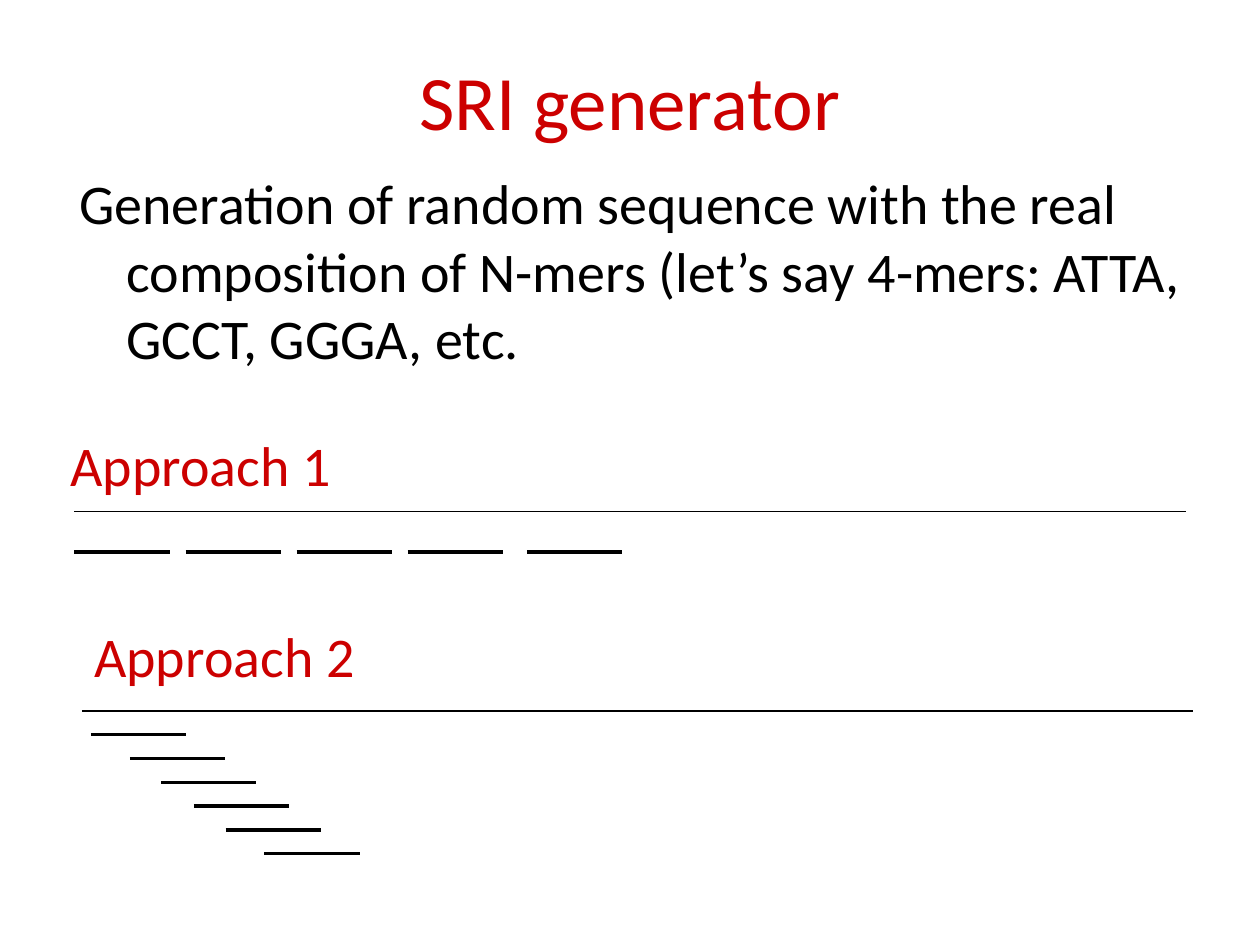
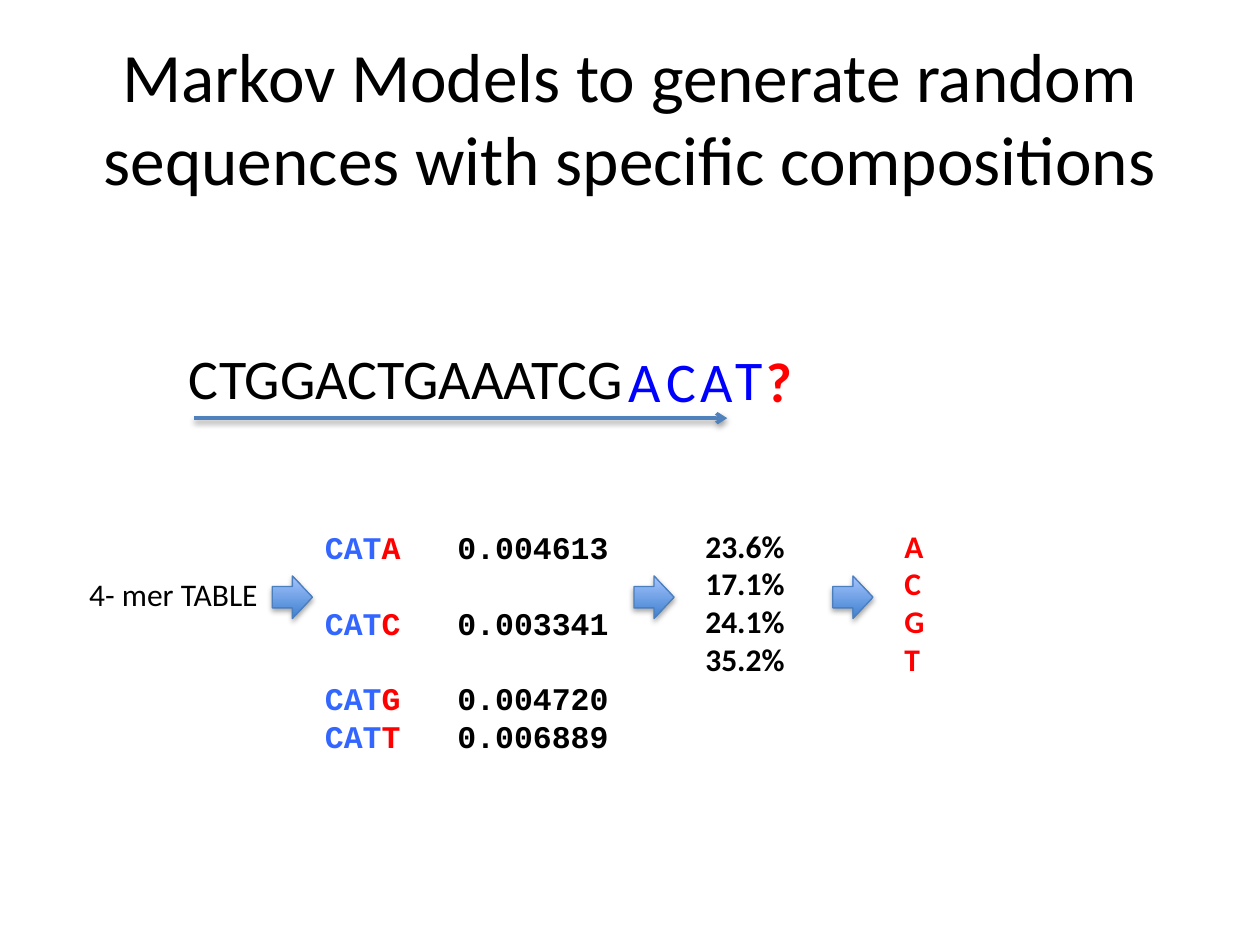
from lxml import etree
from pptx import Presentation
from pptx import util as u
from pptx.dml.color import RGBColor
from pptx.enum import shapes, text
from pptx.oxml.ns import qn

FONT, MONO = "Calibri", "Courier New"
BLACK, CRIMSON, RED = "000000", "CC0000", "FF0000"
BLUE, KMER_BLUE = "0000FF", "3366FF"
ARROW_BLUE, BLOCK_EDGE = "4F81BD", "4B7EBC"
GRADIENT = ("3F80CE", "A4C4FF")


def rgb(value):
    return RGBColor.from_string(value)


def set_effects(sp, alpha=None, dist=0):
    """Give the shape a soft drop shadow, or none without alpha."""
    effects = etree.SubElement(sp._element.spPr, qn("a:effectLst"))
    if alpha:
        shadow = etree.SubElement(
            effects, qn("a:outerShdw"), blurRad=str(u.Pt(3.1)),
            dist=str(u.Pt(dist)), dir="5400000", rotWithShape="0")
        color = etree.SubElement(shadow, qn("a:srgbClr"), val=BLACK)
        etree.SubElement(color, qn("a:alpha"), val=str(alpha * 1000))


def add_text(s, box, paras, size=32, color=BLACK, font=FONT, bold=False,
             wrap=False, align=text.PP_ALIGN.LEFT,
             anchor=text.MSO_ANCHOR.TOP):
    """Add a text box; a paragraph is a string or a list of (text, colour)."""
    sp = s.shapes.add_textbox(*(u.Cm(v) for v in box))
    tf = sp.text_frame
    tf.word_wrap = wrap
    tf.vertical_anchor = anchor
    for i, runs in enumerate(paras):
        p = tf.paragraphs[0] if i == 0 else tf.add_paragraph()
        p.alignment = align
        for words, run_color in [(runs, color)] if isinstance(runs, str) else runs:
            r = p.add_run()
            r.text = words
            r.font.size, r.font.name, r.font.bold = u.Pt(size), font, bold
            r.font.color.rgb = rgb(run_color)
    return tf


def add_title(s, words, height, **style):
    add_text(s, (1.27, 0.76, 22.86, height), [words], wrap=True,
             align=text.PP_ALIGN.CENTER, anchor=text.MSO_ANCHOR.MIDDLE, **style)


def add_line(s, x, y, length, width, color=BLACK):
    """Add a horizontal line."""
    line = s.shapes.add_connector(
        shapes.MSO_CONNECTOR.STRAIGHT,
        u.Cm(x), u.Cm(y), u.Cm(x + length), u.Cm(y))
    line.line.color.rgb = rgb(color)
    line.line.width = u.Pt(width)
    return line


def add_block_arrow(s, x, y):
    sp = s.shapes.add_shape(shapes.MSO_SHAPE.RIGHT_ARROW, u.Cm(x), u.Cm(y),
                            u.Cm(0.81), u.Cm(0.86))
    sp.fill.gradient()
    sp.fill.gradient_angle = 90
    for i, (stop, color) in enumerate(zip(sp.fill.gradient_stops, GRADIENT)):
        stop.position = i
        stop.color.rgb = rgb(color)
    sp.line.color.rgb = rgb(BLOCK_EDGE)
    sp.line.width = u.Pt(0.75)
    set_effects(sp, alpha=35, dist=1.8)


def add_approach(s, x, y, label, label_offset, mers):
    """Draw a sequence line at x, y with its label above and N-mers below."""
    dx, dy = label_offset
    add_text(s, (x + dx, y + dy, 6.27, 1.6), [label], color=CRIMSON)
    set_effects(add_line(s, x, y, 22.4, 0.75))
    for dx, dy in mers:
        set_effects(add_line(s, x + dx, y + dy, 1.92, 2))


def add_sequence(s, x, y):
    """Draw the growing sequence with the next letter unknown."""
    arrow = add_line(s, x + 0.35, y + 1.62, 10.75, 2, ARROW_BLUE)
    etree.SubElement(arrow._element.spPr.find(qn("a:ln")), qn("a:tailEnd"),
                     type="arrow")
    set_effects(arrow, alpha=38, dist=1.6)
    add_text(s, (x, y, 9.32, 1.63), ["CTGGACTGAAATCG"])
    for letter, dx, dy, w in (("A", 8.86, 0.05, 1.17), ("C", 9.62, 0.05, 1.12),
                              ("A", 10.31, 0.05, 1.17), ("T", 11.02, 0.02, 1.07)):
        add_text(s, (x + dx, y + dy, w, 1.63), [letter], color=BLUE)
    add_text(s, (x + 11.63, y + 0.05, 1.04, 1.63), ["?"], color=RED, bold=True)


def add_kmer_list(s, x, y, frequencies):
    rows = [[("CAT", KMER_BLUE), (base, RED), ("\t" + value, BLACK)]
            for base, value in frequencies.items()]
    tf = add_text(s, (x, y, 6.4, 3.33), rows, size=18, font=MONO, bold=True,
                  wrap=True)
    for p in tf.paragraphs:
        p.line_spacing = u.Pt(21.6)
        tabs = etree.SubElement(p._p.get_or_add_pPr(), qn("a:tabLst"))
        etree.SubElement(tabs, qn("a:tab"), pos=str(u.Cm(2.67)), algn="l")
    for p in tf.paragraphs[1:3]:
        p.space_before = u.Pt(21.6)


def add_pipeline(s, x, y):
    """Draw the steps from the 4-mer table to the choice of the next base."""
    frequencies = {"A": "0.004613", "C": "0.003341",
                   "G": "0.004720", "T": "0.006889"}
    add_text(s, (x, y + 1, 3.94, 1.02), ["4- mer TABLE"], size=18)
    add_kmer_list(s, x + 4.75, y + 0.06, frequencies)
    add_text(s, (x + 12.42, y + 0.03, 2.11, 3.33),
             ["23.6%", "17.1%", "24.1%", "35.2%"], size=18, bold=True)
    add_text(s, (x + 16.43, y + 0.03, 0.91, 3.33), list(frequencies),
             size=18, color=RED, bold=True)
    for dx in (3.94, 11.23, 15.24):
        add_block_arrow(s, x + dx, y + 1.15)


def build_generator_slide(s):
    add_title(s, "SRI generator", 2.51, size=44, color=CRIMSON)
    tf = add_text(s, (1.35, 3.28, 22.86, 4.65), [
        "Generation of random sequence with the real composition of N-mers "
        "(let’s say 4-mers: ATTA, GCCT, GGGA, etc."], wrap=True)
    p = tf.paragraphs[0]
    p.space_before = u.Pt(6.4)
    pPr = p._p.get_or_add_pPr()
    pPr.set("marL", str(u.Cm(0.95)))
    pPr.set("indent", str(u.Cm(-0.95)))

    side_by_side = [(dx, 0.82) for dx in (0, 2.24, 4.48, 6.72, 9.12)]
    overlapping = [(dx, 0.48 * (i + 1)) for i, dx in
                   enumerate((0.18, 0.97, 1.6, 2.26, 2.9, 3.68))]
    add_approach(s, 1.5, 10.31, "Approach 1", (-0.33, -1.75), side_by_side)
    add_approach(s, 1.65, 14.33, "Approach 2", (0, -1.93), overlapping)


def build_markov_slide(s):
    add_title(s, "Markov Models to generate random sequences with specific "
              "compositions", 3.18, size=39.6)
    add_sequence(s, 3.56, 6.81)
    add_pipeline(s, 1.55, 10.46)


def main():
    prs = Presentation()
    prs.slide_width, prs.slide_height = u.Cm(25.4), u.Cm(19.05)
    for build in (build_generator_slide, build_markov_slide):
        build(prs.slides.add_slide(prs.slide_layouts[6]))
    prs.save("out.pptx")


if __name__ == "__main__":
    main()
